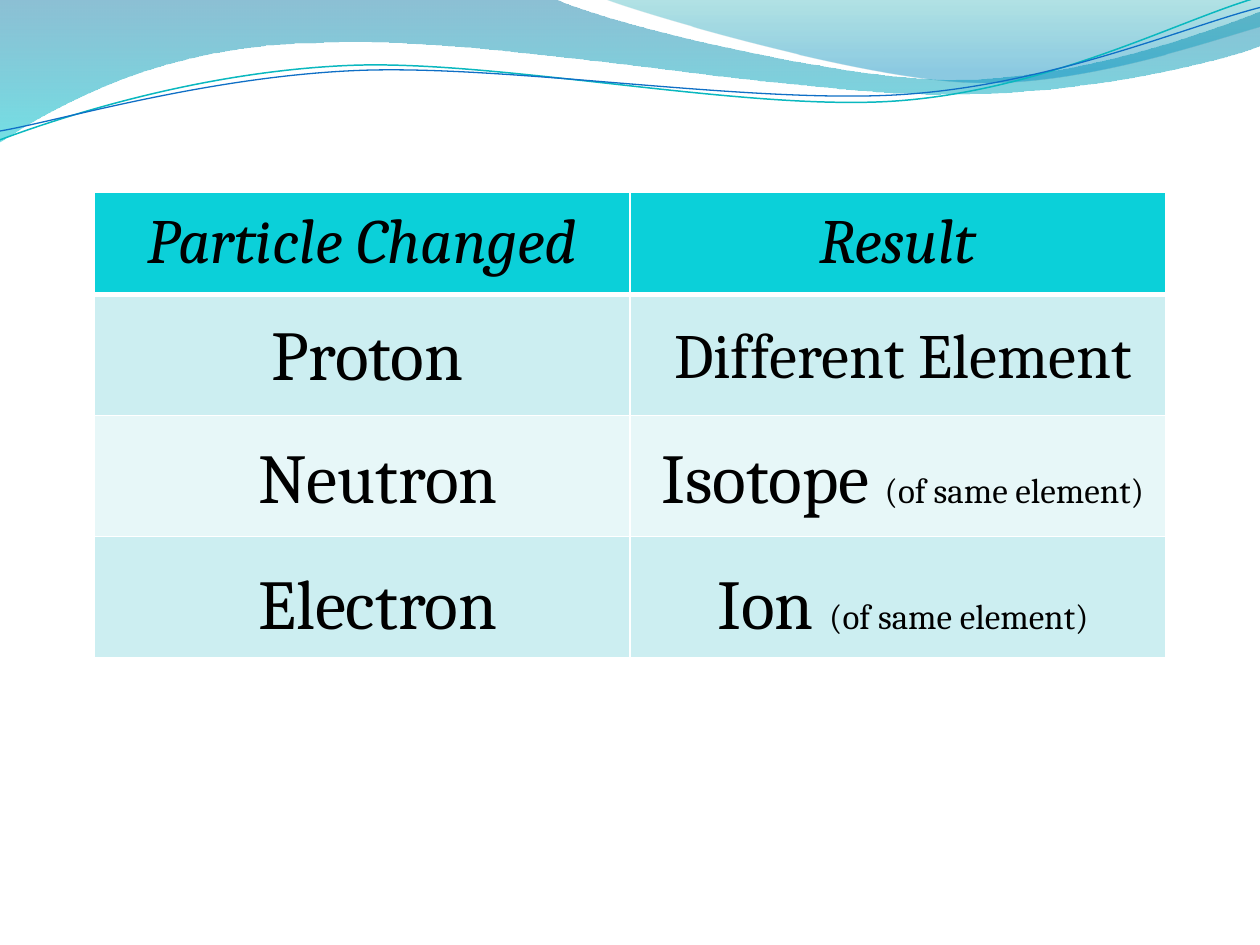
from math import cos, radians, sin

from lxml import etree
from pptx import Presentation
from pptx.dml.color import RGBColor
from pptx.enum.text import MSO_ANCHOR, MSO_AUTO_SIZE, PP_ALIGN
from pptx.oxml.ns import qn
from pptx.util import Pt

CENTER = PP_ALIGN.CENTER
MIDDLE = MSO_ANCHOR.MIDDLE
GROW = MSO_AUTO_SIZE.SHAPE_TO_FIT_TEXT

COLORS = {
    "text": "000000", "border": "FFFFFF",
    "header": "0BD0D9", "band_dark": "CCEEF1", "band_light": "E7F7F8",
    "wave_blue": "0074A1", "wave_cyan": "00C6CF",
    "crest_teal": "00A1A9", "crest_blue": "008BBF",
    "line_teal": "0AB8BF", "line_blue": "0F6FC6",
}
TILT = 2.7  # degrees the thin lines are turned counter-clockwise


def rgb(name):
    return RGBColor.from_string(COLORS[name])


def turn(point, center, degrees):
    """Point turned clockwise about center."""
    dx, dy = point[0] - center[0], point[1] - center[1]
    c, s = cos(radians(degrees)), sin(radians(degrees))
    return center[0] + dx * c - dy * s, center[1] + dx * s + dy * c


class SlideBuilder:
    font = "Cambria"

    def __init__(self, slide):
        self.s = slide

    def outline(self, start, segments, close, center=None):
        """A segment of two numbers is a line, one of six a cubic curve."""
        points = [start] + [seg[i:i + 2] for seg in segments
                            for i in range(0, len(seg), 2)]
        if center:
            points = [turn(point, center, TILT) for point in points]
        points = [(Pt(x), Pt(y)) for x, y in points]
        fb = self.s.shapes.build_freeform(*points[0], scale=1.0)
        fb.add_line_segments(points[1:], close=close)
        sp = fb.convert_to_shape()
        sp.shadow.inherit = False
        # Join each three points of a curve segment into one Bezier
        steps = iter(list(sp._element.iter(qn("a:lnTo"))))
        for seg in segments:
            first = next(steps)
            if len(seg) == 6:
                first.tag = qn("a:cubicBezTo")
                for _ in range(2):
                    extra = next(steps)
                    first.append(extra[0])
                    extra.getparent().remove(extra)
        if center:
            sp.rotation = 360 - TILT
        return sp

    def wave(self, start, segments, stops):
        """Closed area with a see-through gradient from top to bottom."""
        sp = self.outline(start, segments, True)
        sp.line.fill.background()
        sp.fill.gradient()
        sp.fill.gradient_angle = 270
        for stop, (position, color, _) in zip(sp.fill.gradient_stops, stops):
            stop.position = position
            stop.color.rgb = rgb(color)
        grad = sp._element.spPr.find(qn("a:gradFill"))
        for clr, (_, _, opacity) in zip(grad.iter(qn("a:srgbClr")), stops):
            etree.SubElement(clr, qn("a:alpha")).set("val", str(opacity * 1000))

    def curve(self, start, segments, center, color, width):
        sp = self.outline(start, segments, False, center)
        sp.fill.background()
        sp.line.color.rgb = rgb(color)
        sp.line.width = Pt(width)

    def run(self, p, text, size, italic=False):
        r = p.add_run()
        r.text = text
        r.font.name = self.font
        r.font.size = Pt(size)
        r.font.italic = italic
        r.font.bold = False
        r.font.color.rgb = rgb("text")

    def label(self, left, top, width, height, runs):
        tb = self.s.shapes.add_textbox(Pt(left), Pt(top), Pt(width), Pt(height))
        tf = tb.text_frame
        tf.word_wrap = True
        tf.auto_size = GROW
        p = tf.paragraphs[0]
        p.alignment = CENTER
        for text, size in runs:
            self.run(p, text, size)

    def borders(self, cell, widths):
        tc_pr = cell._tc.get_or_add_tcPr()
        for i, (side, width) in enumerate(widths.items()):
            ln = etree.Element(qn("a:ln" + side), w=str(Pt(width)))
            fill = etree.SubElement(ln, qn("a:solidFill"))
            etree.SubElement(fill, qn("a:srgbClr")).set("val", COLORS["border"])
            tc_pr.insert(i, ln)

    def table(self, left, top, col_width, heights, fills, headings):
        cols = len(headings)
        table = self.s.shapes.add_table(
            len(heights), cols, Pt(left), Pt(top),
            Pt(col_width * cols), Pt(sum(heights))).table
        for col in table.columns:
            col.width = Pt(col_width)
        for i, (height, fill) in enumerate(zip(heights, fills)):
            table.rows[i].height = Pt(height)
            for cell in table.rows[i].cells:
                cell.fill.solid()
                cell.fill.fore_color.rgb = rgb(fill)
                self.borders(cell, {"L": 1, "R": 1, "T": 3 if i == 1 else 1,
                                    "B": 3 if i == 0 else 1})
        for cell, text in zip(table.rows[0].cells, headings):
            cell.vertical_anchor = MIDDLE
            p = cell.text_frame.paragraphs[0]
            p.alignment = CENTER
            self.run(p, text, 36, italic=True)


def main():
    prs = Presentation()
    prs.slide_width, prs.slide_height = Pt(720), Pt(540)
    b = SlideBuilder(prs.slides.add_slide(prs.slide_layouts[6]))

    # Waves across the top
    b.wave((0, -0.7), [
        (316.8, -0.7),
        (342.7, 12.2, 478.1, 45.4, 545.8, 45.4),
        (614.2, 45.4, 689.8, 18.7, 720, 6.5),
        (720.7, 25.9),
        (707.8, 31.7, 626.4, 54.7, 537.1, 54),
        (447.8, 54, 275, 20.2, 185, 24.5),
        (92.9, 25.2, 33.1, 59.8, -0.7, 81.4),
        (0, -0.7),
    ], [(0, "wave_blue", 45), (1, "wave_cyan", 55)])
    b.wave((344.9, -0.7), [
        (366.5, 7.9, 491, 44.6, 553.7, 46.8),
        (616.3, 49.7, 691.9, 23, 720, 15.1),
        (720, 0),
        (344.9, -0.7),
    ], [(0, "crest_teal", 30), (0.8, "crest_blue", 45)])

    # Thin lines along the waves
    b.curve((0, 79.9), [
        (34.6, 67, 113.8, 41, 199.4, 37.4),
        (284.4, 33.8, 427, 64.1, 513.4, 57.6),
        (599.8, 51.1, 675.4, 10.8, 718.6, -1.4),
    ], (359.3, 41.4), "line_teal", 0.85)
    b.curve((0, 74.9), [
        (33.8, 69.1, 118.1, 43.9, 203.8, 40.3),
        (290.2, 36.7, 429.8, 59.8, 516.2, 54),
        (601.9, 48.2, 677.5, 15.1, 720, 4.3),
    ], (359.6, 42.5), "line_blue", 0.75)

    # Table with headings and banded rows
    b.table(54, 110, 306, [58.2] + [69.2] * 3,
            ["header", "band_dark", "band_light", "band_dark"],
            ["Particle Changed", "Result"])

    # Labels lying over the table rows
    note = ("(of same element)", 20)
    for left, top, width, height, runs in [
        (102, 174, 216, 55.7, [("Proton", 40)]),
        (108, 244, 216, 55.7, [("Neutron", 40)]),
        (108, 316, 216, 55.7, [("Electron", 40)]),
        (366, 177, 300, 50.9, [("Different Element", 36)]),
        (354, 244, 324, 55.7, [("Isotope ", 40), note]),
        (366, 316, 300, 55.7, [("Ion ", 40), note]),
    ]:
        b.label(left, top, width, height, runs)

    prs.save("out.pptx")


if __name__ == "__main__":
    main()
